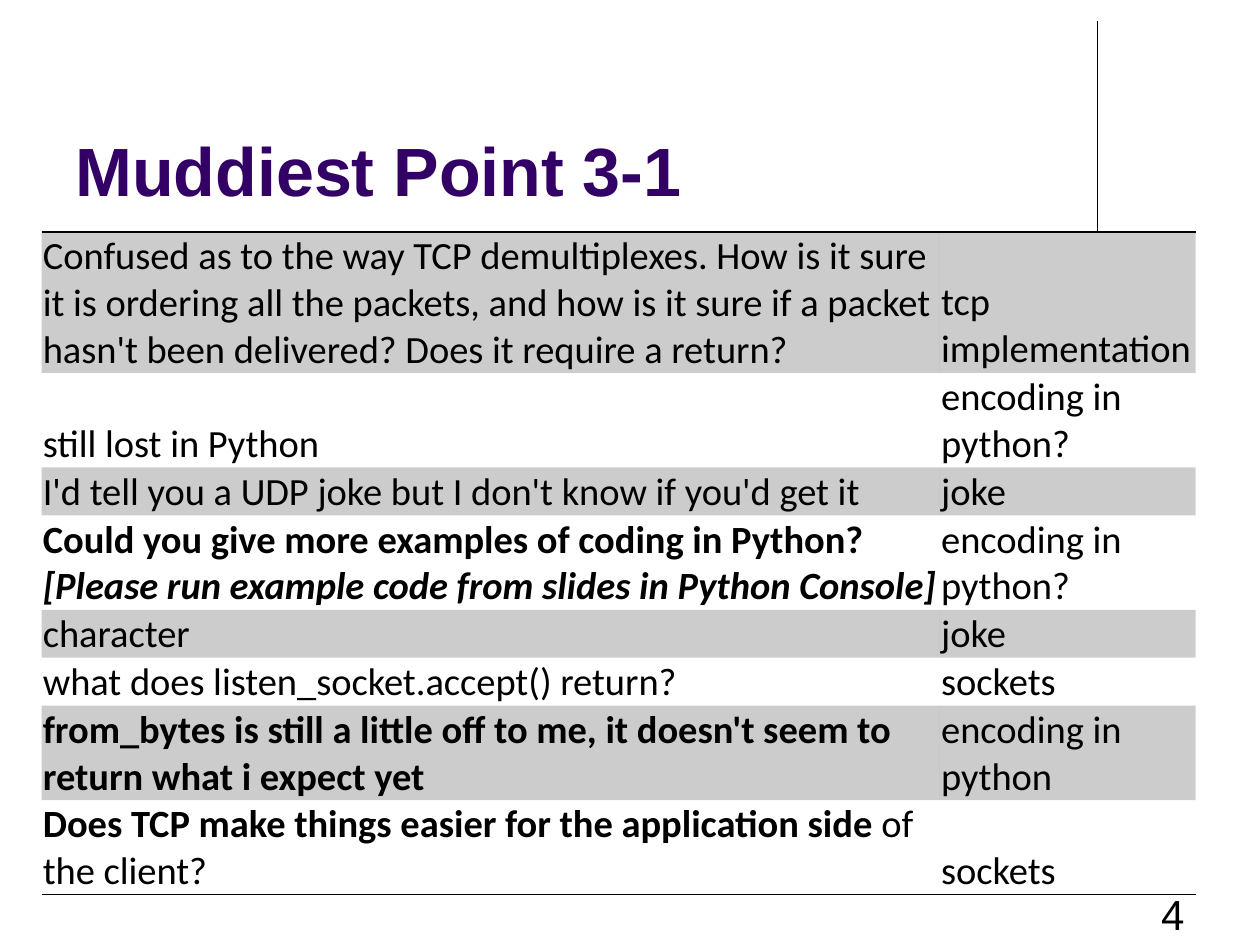
from lxml.etree import SubElement as Sub
from pptx import Presentation
from pptx.dml.color import RGBColor
from pptx.enum.shapes import MSO_CONNECTOR as Conn
from pptx.enum.text import MSO_ANCHOR as Anchor, PP_ALIGN as Align
from pptx.oxml.ns import qn
from pptx.util import Inches, Pt

BLACK = "000000"
PURPLE = "330066"


def paint(target, color):
    target.rgb = RGBColor.from_string(color)


def write(frame, *runs, size=22, font="Calibri", color=BLACK, align=Align.LEFT,
          anchor=Anchor.BOTTOM):
    frame.word_wrap = True
    frame.vertical_anchor = anchor
    para = frame.paragraphs[0]
    para.alignment = align
    for text, style in runs:
        run = para.add_run()
        run.text = text
        run.font.size = Pt(size)
        run.font.name = font
        run.font.bold = "b" in style
        run.font.italic = "i" in style
        paint(run.font.color, color)


class Deck:
    def __init__(self):
        self.show = Presentation()
        self.show.slide_width = Inches(10)
        self.show.slide_height = Inches(7.5)
        self.slide = self.show.slides.add_slide(self.show.slide_layouts[6])
        self.band = BLACK
        self.alpha = 20
        self.rule = 1

    def line(self, x1, y1, x2, y2, width=0.75):
        line = self.slide.shapes.add_connector(
            Conn.STRAIGHT, Inches(x1), Inches(y1), Inches(x2), Inches(y2))
        paint(line.line.color, BLACK) if line.line.fill.solid() is None else None
        line.line.width = Pt(width)
        Sub(line._element.spPr, qn("a:effectLst"))

    def text(self, x, y, w, h, words, **style):
        box = self.slide.shapes.add_textbox(
            Inches(x), Inches(y), Inches(w), Inches(h))
        write(box.text_frame, (words, "b" if style.pop("bold", False) else ""),
              **style)

    def border(self, cell, sides):
        props = cell._tc.get_or_add_tcPr()
        for spot, side in enumerate("LRTB"):
            edge = Sub(props, qn(f"a:ln{side}"))
            props.insert(spot, edge)
            if side in sides:
                edge.set("w", str(Pt(self.rule)))
                fill = Sub(edge, qn("a:solidFill"))
                Sub(fill, qn("a:srgbClr"), val=BLACK)
            else:
                edge.set("w", "0")
                Sub(edge, qn("a:noFill"))

    def shade(self, cell, dark):
        if not dark:
            cell.fill.background()
            return
        cell.fill.solid()
        paint(cell.fill.fore_color, self.band)
        tint = cell._tc.tcPr.find(qn("a:solidFill"))[0]
        Sub(tint, qn("a:alpha"), val=str(self.alpha * 1000))

    def table(self, x, y, widths, rows):
        high = [0.37 * lines + 0.01 for lines, _, _ in rows]
        grid = self.slide.shapes.add_table(
            len(rows), len(widths), Inches(x), Inches(y),
            Inches(sum(widths)), Inches(sum(high))).table
        grid.first_row = grid.horz_banding = False
        for col, width in zip(grid.columns, widths):
            col.width = Inches(width)
        for r, (_, note, topic) in enumerate(rows):
            grid.rows[r].height = Inches(high[r])
            sides = {0: "T", len(rows) - 1: "B"}.get(r, "")
            for c, runs in enumerate((note, [(topic, "")])):
                cell = grid.cell(r, c)
                cell.margin_left = cell.margin_right = Inches(0.01)
                cell.margin_top = Inches(0.01)
                cell.margin_bottom = 0
                write(cell.text_frame, *runs)
                cell.vertical_anchor = Anchor.BOTTOM
                self.shade(cell, r % 2 == 0)
                self.border(cell, sides)

    def save(self):
        self.show.save("out.pptx")


ROWS = [
    (3, [("Confused as to the way TCP demultiplexes. How is it sure it is "
          "ordering all the packets, and how is it sure if a packet hasn't "
          "been delivered? Does it require a return?", "")],
     "tcp implementation"),
    (2, [("still lost in Python", "")], "encoding in python?"),
    (1, [("I'd tell you a UDP joke but I don't know if you'd get it", "")],
     "joke"),
    (2, [("Could you give more examples of coding in Python? ", "b"),
         ("[Please run example code from slides in Python Console]", "bi")],
     "encoding in python?"),
    (1, [("character", "")], "joke"),
    (1, [("what does listen_socket.accept() return?", "")], "sockets"),
    (2, [("from_bytes is still a little off to me, it doesn't seem to "
          "return what i expect yet", "b")], "encoding in python"),
    (2, [("Does TCP make things easier for the application side ", "b"),
         ("of the client?", "")], "sockets"),
]


def main():
    deck = Deck()
    deck.line(8.71, 0.17, 8.71, 1.83)
    deck.text(0.5, 0.3, 8.25, 1.42, "Muddiest Point 3-1", size=39,
              font="Arial", color=PURPLE, bold=True)
    deck.table(0.33, 1.84, [7.13, 2.03], ROWS)
    deck.text(7.17, 7, 2.33, 0.5, "4", size=24, font="Arial",
              align=Align.RIGHT)
    deck.save()


if __name__ == "__main__":
    main()
